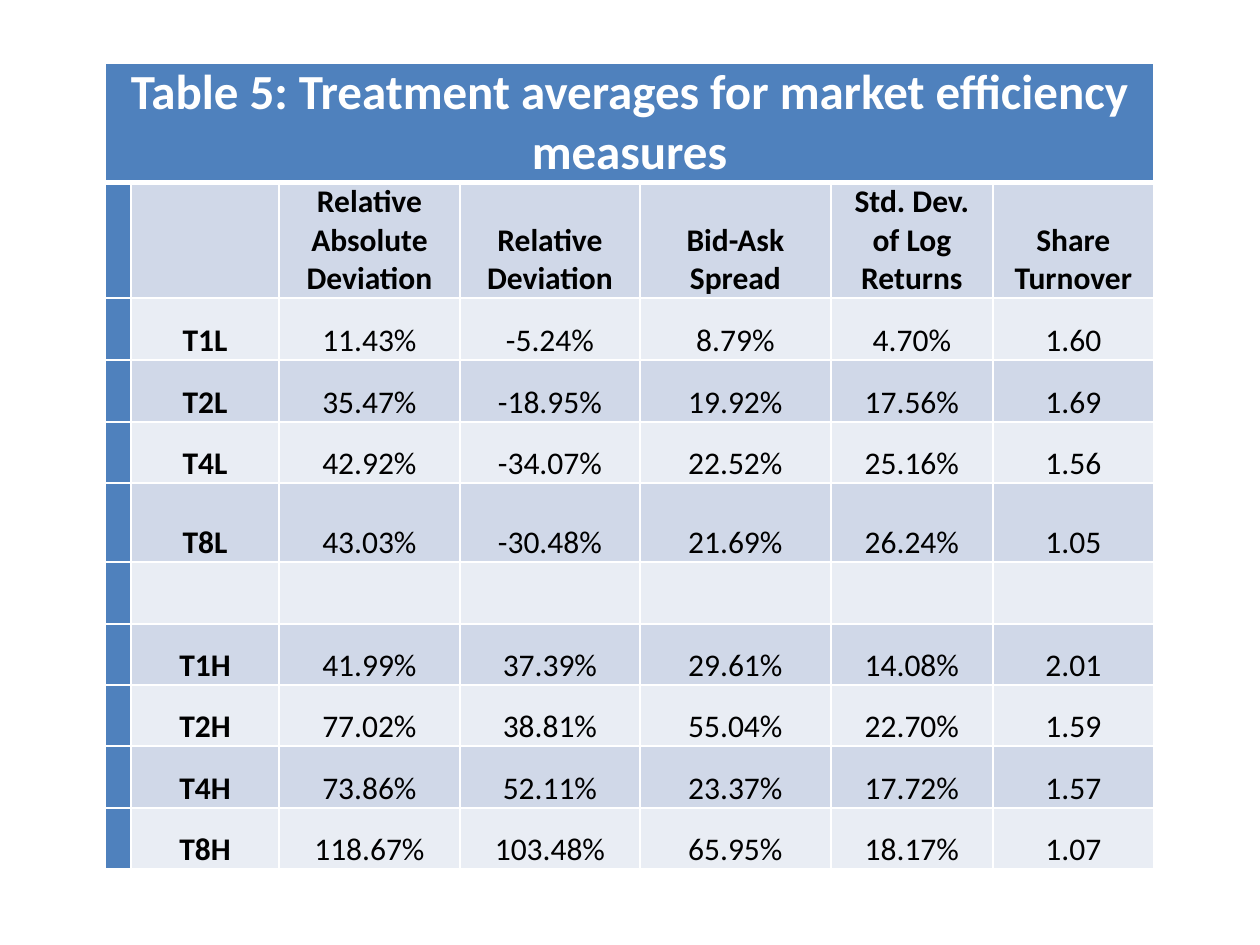
from itertools import pairwise
from lxml import etree
from pptx import Presentation
from pptx.dml.color import RGBColor
from pptx.enum.text import MSO_ANCHOR, PP_ALIGN
from pptx.oxml.ns import qn
from pptx.util import Pt

CENTER, TOP, BOTTOM = PP_ALIGN.CENTER, MSO_ANCHOR.TOP, MSO_ANCHOR.BOTTOM
PX = 914400 // 126

THEME = dict(
    font="Calibri", title_size=28, body_size=18,
    accent="4F81BD", bands=("D0D8E8", "E9EDF4"),
    title="FFFFFF", text="000000", border="FFFFFF",
    thin=1, thick=3,
)

TITLE = "Table 5: Treatment averages for market efficiency measures"
HEADERS = ("", "Relative Absolute Deviation", "Relative Deviation",
           "Bid-Ask Spread", "Std. Dev. of Log Returns", "Share Turnover")
TREATMENTS = [
    ("T1L", "11.43%", "-5.24%", "8.79%", "4.70%", "1.60"),
    ("T2L", "35.47%", "-18.95%", "19.92%", "17.56%", "1.69"),
    ("T4L", "42.92%", "-34.07%", "22.52%", "25.16%", "1.56"),
    ("T8L", "43.03%", "-30.48%", "21.69%", "26.24%", "1.05"),
    ("",) * 6,
    ("T1H", "41.99%", "37.39%", "29.61%", "14.08%", "2.01"),
    ("T2H", "77.02%", "38.81%", "55.04%", "22.70%", "1.59"),
    ("T4H", "73.86%", "52.11%", "23.37%", "17.72%", "1.57"),
    ("T8H", "118.67%", "103.48%", "65.95%", "18.17%", "1.07"),
]
COL_EDGES = (105, 131, 279, 460, 640, 831, 993, 1154)
ROW_EDGES = (63, 182, 297, 359, 421, 482, 561, 623, 684, 745, 807, 868)
INSET = 9


def set_borders(cell, top, bottom):
    tc_pr = cell._tc.get_or_add_tcPr()
    widths = dict(lnL=THEME["thin"], lnR=THEME["thin"], lnT=top, lnB=bottom)
    for i, (side, width) in enumerate(widths.items()):
        ln = etree.Element(qn(f"a:{side}"), w=str(Pt(width)))
        fill = etree.SubElement(ln, qn("a:solidFill"))
        etree.SubElement(fill, qn("a:srgbClr"), val=THEME["border"])
        tc_pr.insert(i, ln)


def style_cell(cell, text, fill, color, size, bold, anchor):
    cell.fill.solid()
    cell.fill.fore_color.rgb = RGBColor.from_string(fill)
    cell.margin_left = cell.margin_right = INSET * PX
    cell.margin_top = cell.margin_bottom = 0
    cell.vertical_anchor = anchor
    p = cell.text_frame.paragraphs[0]
    p.text = text
    p.alignment = CENTER
    p.font.name = THEME["font"]
    p.font.size = Pt(size)
    p.font.bold = bold
    p.font.color.rgb = RGBColor.from_string(color)


def main():
    prs = Presentation()
    prs.slide_width, prs.slide_height = 1260 * PX, 945 * PX
    slide = prs.slides.add_slide(prs.slide_layouts[6])

    body = [HEADERS, *TREATMENTS]
    left, right = COL_EDGES[0], COL_EDGES[-1]
    top, bottom = ROW_EDGES[0], ROW_EDGES[-1]
    table = slide.shapes.add_table(
        len(body) + 1, len(HEADERS) + 1, left * PX, top * PX,
        (right - left) * PX, (bottom - top) * PX).table
    table.first_row = table.horz_banding = False
    for column, (a, b) in zip(table.columns, pairwise(COL_EDGES)):
        column.width = (b - a) * PX
    for row, (a, b) in zip(table.rows, pairwise(ROW_EDGES)):
        row.height = (b - a) * PX

    title = table.cell(0, 0)
    title.merge(table.cell(0, len(HEADERS)))
    style_cell(title, TITLE, THEME["accent"], THEME["title"],
               THEME["title_size"], True, TOP)
    for r, values in enumerate(body, 1):
        for c, text in enumerate(("", *values)):
            fill = THEME["bands"][(r - 1) % 2] if c else THEME["accent"]
            style_cell(table.cell(r, c), text, fill, THEME["text"],
                       THEME["body_size"], r == 1 or c == 1, BOTTOM)

    thin, thick = THEME["thin"], THEME["thick"]
    for r, row in enumerate(table.rows):
        for cell in row.cells:
            set_borders(cell, thick if r == 1 else thin,
                        thick if r == 0 else thin)

    prs.save("out.pptx")


if __name__ == "__main__":
    main()
